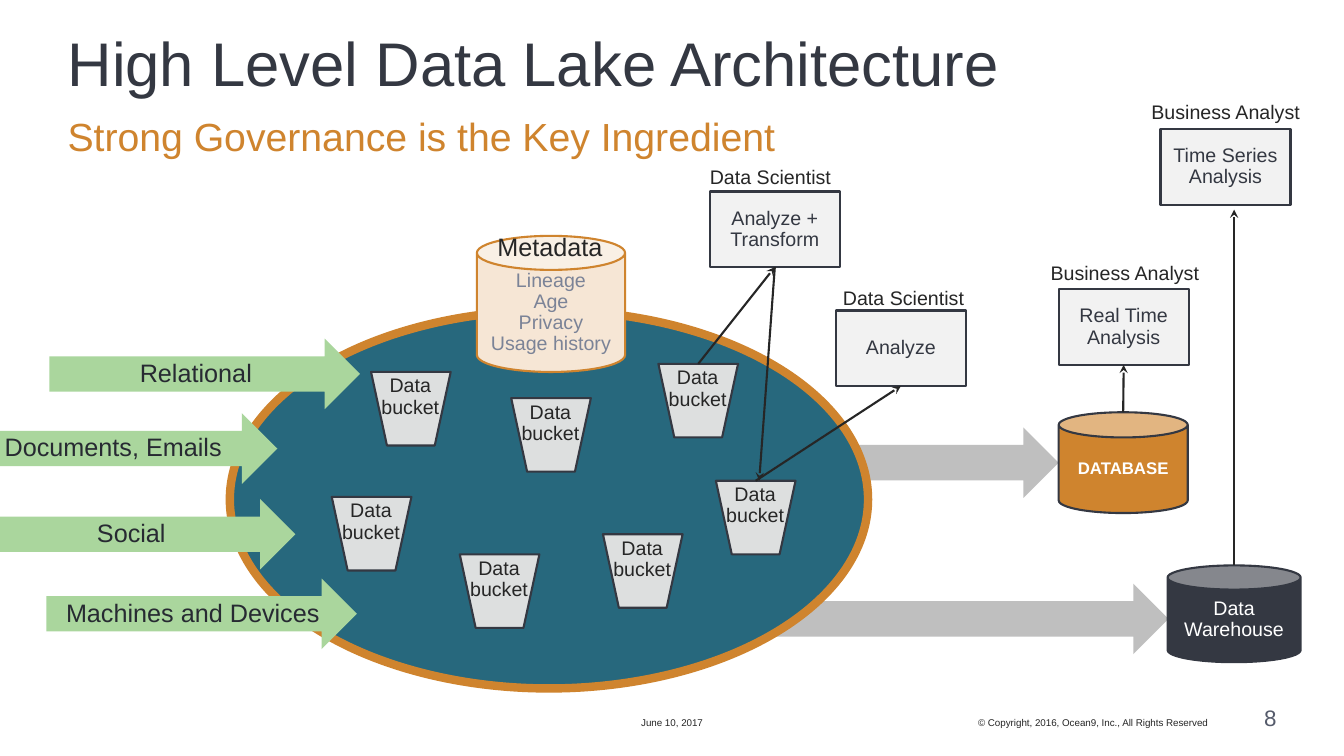
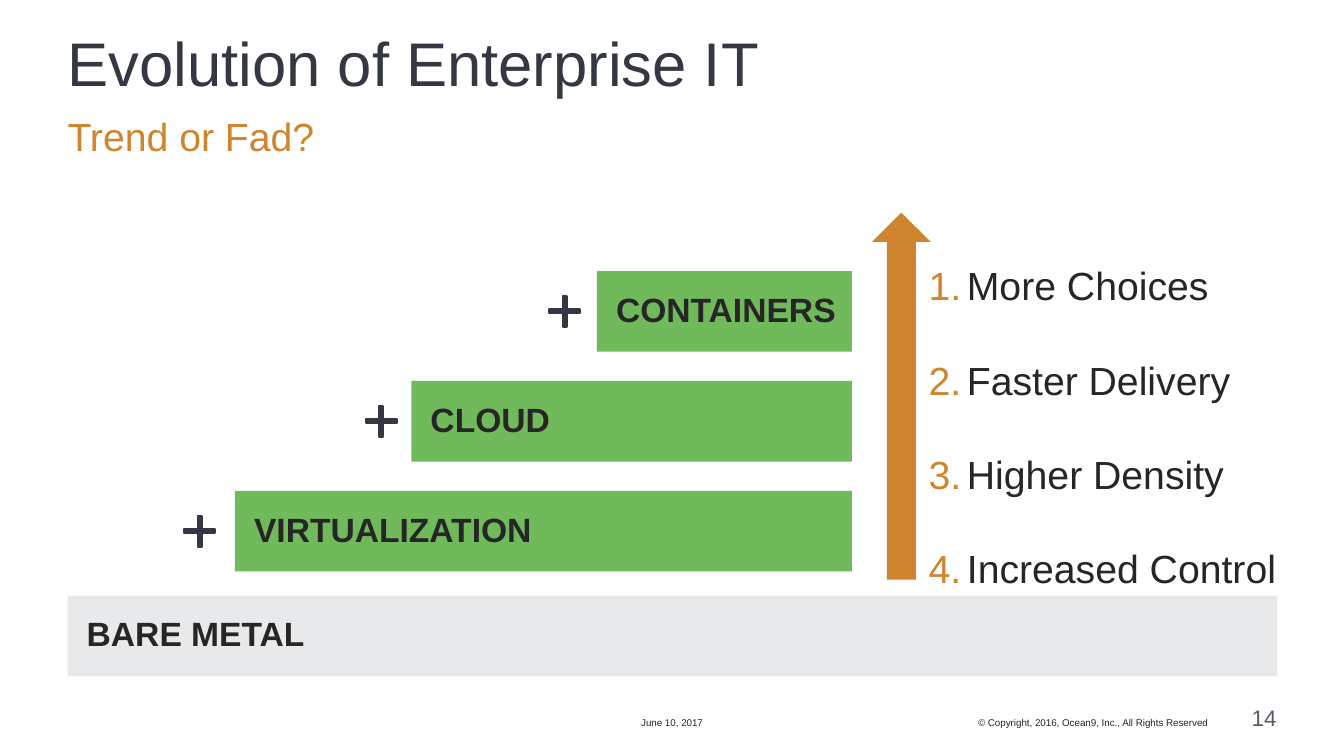
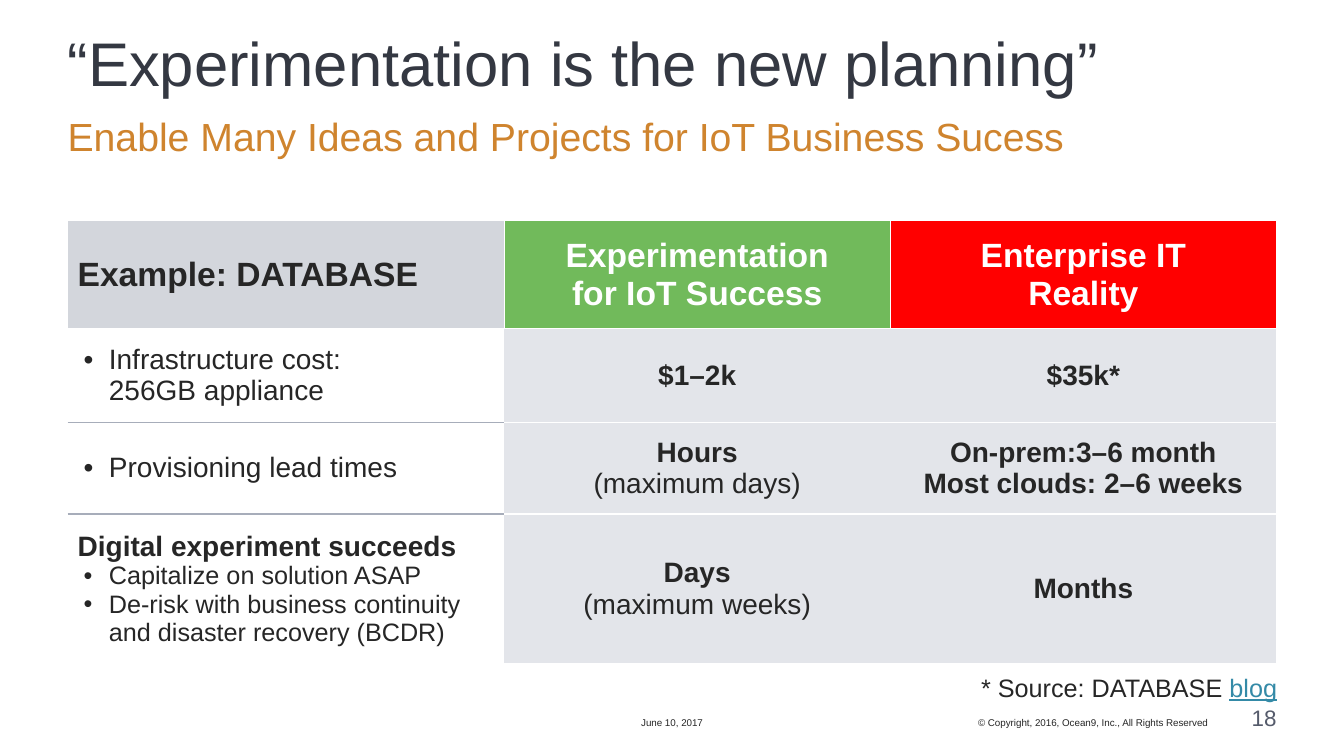
import lxml.etree
import pptx
import pptx.dml.color
import pptx.enum.shapes
import pptx.enum.text
import pptx.oxml
import pptx.oxml.ns
import pptx.util

Inches = pptx.util.Inches
SHAPE = pptx.enum.shapes.MSO_SHAPE
ANCHOR = pptx.enum.text.MSO_ANCHOR
ALIGN = pptx.enum.text.PP_ALIGN
LEFT, CENTER, RIGHT = ALIGN.LEFT, ALIGN.CENTER, ALIGN.RIGHT
qn = pptx.oxml.ns.qn

COLORS = {
    "text": "262626", "navy": "343842", "orange": "CF842E", "white": "FFFFFF",
    "page number": "555B6B", "link": "348AA7", "lake": "27687D", "cream": "F6E6D5",
    "metadata": "7B8397", "feed": "AAD69D", "feed text": "272A32", "gray arrow": "BFBFBF",
    "bucket": "DDDFDF", "box": "F2F2F2", "green": "71BA5B", "bare metal": "E8E9EA",
    "header": "D3D6DC", "red": "FF0000", "cell": "E3E5EA", "rule": "A7ADBA",
}
RGB = {name: pptx.dml.color.RGBColor.from_string(value) for name, value in COLORS.items()}


def write(frame, text, *, size, color="text", bold=False, underline=None, align=LEFT,
          spacing=0.9, bullet=None, bullet_color=None, indent=0, same_paragraph=False):
    """Add text to a frame: \\n starts a paragraph, \\v breaks a line."""
    for line in text.split("\n"):
        paragraph = frame.paragraphs[-1]
        if paragraph.runs and not same_paragraph:
            paragraph = frame.add_paragraph()
        if not same_paragraph:
            properties = paragraph._p.get_or_add_pPr()
            properties.set("marL", str(Inches(indent)))
            properties.set("indent", str(Inches(-0.25 if bullet == "•" else -indent)))
            if bullet_color:
                holder = lxml.etree.SubElement(properties, qn("a:buClr"))
                lxml.etree.SubElement(holder, qn("a:srgbClr"), val=COLORS[bullet_color])
            if bullet == "1.":
                lxml.etree.SubElement(properties, qn("a:buAutoNum"), type="arabicPeriod")
            elif bullet:
                lxml.etree.SubElement(properties, qn("a:buFont"), typeface="Arial")
                lxml.etree.SubElement(properties, qn("a:buChar"), char=bullet)
            else:
                lxml.etree.SubElement(properties, qn("a:buNone"))
            paragraph.alignment = align
            paragraph.line_spacing = spacing
            paragraph.space_before = pptx.util.Pt(0)
        for number, piece in enumerate(line.split("\v")):
            if number:
                paragraph.add_line_break()
            run = paragraph.add_run()
            run.text = piece
            run.font.name = "Arial"
            run.font.size = pptx.util.Pt(size)
            run.font.bold = bold
            run.font.underline = underline
            run.font.color.rgb = RGB[color]


def add_box(slide, kind, left, top, width, height, fill=None, line=None, line_width=1.5):
    """Add a preset shape, or an unpadded text box when kind is None."""
    place = [Inches(length) for length in (left, top, width, height)]
    if kind is None:
        shape = slide.shapes.add_textbox(*place)
        frame = shape.text_frame
        frame.word_wrap = True
        frame.margin_left = frame.margin_right = frame.margin_top = frame.margin_bottom = 0
        return shape
    shape = slide.shapes.add_shape(kind, *place)
    shape.shadow.inherit = False
    shape.fill.solid()
    shape.fill.fore_color.rgb = RGB[fill]
    if line:
        shape.line.color.rgb = RGB[line]
        shape.line.width = pptx.util.Pt(line_width)
    else:
        shape.line.fill.background()
    return shape


presentation = pptx.Presentation()
presentation.slide_width = Inches(13.33)
presentation.slide_height = Inches(7.5)

# Titles, subtitles and footers
TITLE_ONLY, TITLE_CONTENT, TWO_CONTENT = 5, 1, 3
slides = []
for layout, title, subtitle, subtitle_width, page in (
    (TITLE_CONTENT, "High Level Data Lake Architecture",
     "Strong Governance is the Key Ingredient", 9.42, "8"),
    (TWO_CONTENT, "Evolution of Enterprise IT", "Trend or Fad?", 12, "14"),
    (TITLE_CONTENT, "“Experimentation is the new planning”",
     "Enable Many Ideas and Projects for IoT Business Sucess", 12.17, "18"),
):
    slide = presentation.slides.add_slide(presentation.slide_layouts[layout])
    slides.append(slide)
    for placeholder, text, top, width, height, size, color in (
        (slide.shapes.title, title, 0.33, 12.5, 0.75, 44, "navy"),
        (slide.placeholders[1], subtitle, 1.17, subtitle_width, 0.58, 28, "orange"),
    ):
        placeholder.left, placeholder.top = Inches(0.67), Inches(top)
        placeholder.width, placeholder.height = Inches(width), Inches(height)
        frame = placeholder.text_frame
        frame.margin_left = frame.margin_right = frame.margin_top = frame.margin_bottom = 0
        frame.vertical_anchor = ANCHOR.TOP
        frame.auto_size = pptx.enum.text.MSO_AUTO_SIZE.NONE
        write(frame, text, size=size, color=color)
    for text, left, width, height, size, color, align in (
        ("June 10, 2017", 6.12, 1.09, 0.23, 7, "text", CENTER),
        ("© Copyright, 2016, Ocean9, Inc., All Rights Reserved",
         7.58, 4.4, 0.23, 7, "text", RIGHT),
        (page, 12.08, 0.58, 0.25, 16, "page number", RIGHT),
    ):
        footer = add_box(slide, None, left, 7, width, height)
        footer.text_frame.vertical_anchor = ANCHOR.BOTTOM
        write(footer.text_frame, text, size=size, color=color, align=align, spacing=1)

lake_slide, evolution_slide, planning_slide = slides

# Data lake with its feeds and outlets
for left, top, width in ((7.42, 5.79, 4.17), (7.84, 4.24, 2.66)):
    add_box(lake_slide, SHAPE.RIGHT_ARROW, left, top, width, 0.7, "gray arrow")
add_box(lake_slide, SHAPE.OVAL, 2.28, 3.08, 6.33, 3.75, "lake", "orange", 6)

for text, left, top in (
    ("Relational", 0.49, 3.36), ("Documents, Emails", -0.33, 4.1),
    ("Social", -0.15, 4.95), ("Machines and Devices", 0.46, 5.74),
):
    feed = add_box(lake_slide, SHAPE.RIGHT_ARROW, left, top, 3.08, 0.7, "feed")
    write(feed.text_frame, text, size=18, color="feed text", align=CENTER)

buckets = []
for left, top in ((3.68, 3.69), (6.53, 3.61), (7.1, 4.77), (5.98, 5.3),
                  (4.56, 5.5), (3.29, 4.93), (5.07, 3.95)):
    buckets.append(add_box(lake_slide, SHAPE.FLOWCHART_MANUAL_OPERATION,
                           left, top, 0.79, 0.73, "bucket", "navy"))
    label = add_box(lake_slide, None, left - 0.11, top + 0.04, 1, 0.53)
    write(label.text_frame, "Data\nbucket", size=14, align=CENTER)

for text, left, top, width, height, fill, line, size, color, bold in (
    ("Lineage\nAge\nPrivacy\nUsage history", 4.73, 2.34, 1.47, 1.35,
     "cream", "orange", 14, "metadata", False),
    ("Data Warehouse", 11.58, 5.61, 1.32, 0.96, "navy", "navy", 14, "white", False),
    ("DATABASE", 10.5, 4.09, 1.28, 1, "orange", "navy", 12, "white", True),
):
    can = add_box(lake_slide, SHAPE.CAN, left, top, width, height, fill, line)
    write(can.text_frame, text, size=size, color=color, bold=bold, align=CENTER)
metadata_label = add_box(lake_slide, None, 4.83, 2.29, 1.25, 0.3)
write(metadata_label.text_frame, "Metadata", size=18, align=CENTER, spacing=1)

analyses = {}
for text, left, top, role, role_left, role_top in (
    ("Analyze + Transform", 7.04, 1.9, "Data Scientist", 7.04, 1.66),
    ("Analyze", 8.29, 3.08, "Data Scientist", 8.36, 2.86),
    ("Real Time Analysis", 10.5, 2.87, "Business Analyst", 10.42, 2.61),
    ("Time Series Analysis", 11.51, 1.28, "Business Analyst", 11.42, 1.02),
):
    analyses[text] = add_box(lake_slide, SHAPE.RECTANGLE, left, top, 1.29, 0.75, "box", "navy")
    write(analyses[text].text_frame, text, size=14, color="navy", align=CENTER)
    role_label = add_box(lake_slide, None, role_left, role_top, 1.7, 0.35)
    write(role_label.text_frame, role, size=14)

transform = analyses["Analyze + Transform"]
for start, end, start_shape, start_site, end_shape in (
    ((6.93, 3.61), (7.68, 2.65), buckets[1], 0, transform),
    ((7.68, 2.65), (7.53, 4.77), transform, 2, None),
    ((7.49, 4.77), (8.94, 3.83), buckets[2], 0, analyses["Analyze"]),
    ((11.14, 4.09), (11.15, 3.62), None, None, analyses["Real Time Analysis"]),
    ((12.24, 5.61), (12.24, 2.08), None, None, None),
):
    connector = lake_slide.shapes.add_connector(
        pptx.enum.shapes.MSO_CONNECTOR.STRAIGHT,
        *[Inches(length) for length in start + end])
    if start_shape:
        connector.begin_connect(start_shape, start_site)
    if end_shape:
        connector.end_connect(end_shape, 2)
    connector.line.color.rgb = RGB["text"]
    connector.line.width = pptx.util.Pt(1.5)
    lxml.etree.SubElement(connector.line._get_or_add_ln(), qn("a:tailEnd"), type="stealth")
    lxml.etree.SubElement(connector._element.spPr, qn("a:effectLst"))

# Layers of enterprise IT
BAR_RIGHT = 8.45
bars = [("BARE METAL", 0.67, 5.91, 12, "bare metal")]
for level, (text, left, plus_left) in enumerate((
    ("CONTAINERS", 5.92, 5.39), ("CLOUD", 4.08, 3.57), ("VIRTUALIZATION", 2.33, 1.77),
)):
    top = 2.69 + 1.09 * level
    bars.append((text, left, top, BAR_RIGHT - left, "green"))
    plus = add_box(evolution_slide, SHAPE.MATH_PLUS, plus_left, top + 0.19, 0.42, 0.42,
                   "navy", "navy")
    plus.adjustments[0] = 0.09
for text, left, top, width, fill in bars:
    bar = add_box(evolution_slide, SHAPE.RECTANGLE, left, top, width, 0.8, fill)
    bar.text_frame.margin_left = Inches(0.19)
    write(bar.text_frame, text, size=24, bold=True)

add_box(evolution_slide, SHAPE.UP_ARROW, 8.65, 2.11, 0.58, 3.64, "orange")
benefits = evolution_slide.placeholders[2]
benefits.left, benefits.top = Inches(9.21), Inches(2.13)
benefits.width, benefits.height = Inches(3.62), Inches(3.79)
frame = benefits.text_frame
frame.margin_left = frame.margin_right = frame.margin_top = frame.margin_bottom = 0
frame.auto_size = pptx.enum.text.MSO_AUTO_SIZE.NONE
write(frame, "More Choices\nFaster Delivery\nHigher Density\nIncreased Control", size=28,
      spacing=2, bullet="1.", bullet_color="orange", indent=0.38)

# Comparison table: each cell lists its pieces of text with their format
bullet = {"bullet": "•", "indent": 0.31}
bold = {"bold": True}
more = {"same_paragraph": True}
rows = (
    (1.07, [("Example: DATABASE", bold)],
     [("Experimentation\vfor IoT Success", {"bold": True, "color": "white"})],
     [("Enterprise IT\vReality", {"bold": True, "color": "white"})]),
    (0.93, [("Infrastructure cost:\v256GB appliance", bullet)],
     [("$1–2k", bold)], [("$35k*", bold)]),
    (0.91, [("Provisioning lead times", bullet)],
     [("Hours\v", bold), ("(maximum days)", more)],
     [("On-prem:3–6 month\vMost clouds: 2–6 weeks", bold)]),
    (1.48, [("Digital experiment succeeds", bold),
            ("Capitalize on solution ASAP\n"
             "De-risk with business continuity and disaster recovery (BCDR)",
             {"size": 18, **bullet})],
     [("Days\v", bold), ("(maximum weeks)", more)], [("Months", bold)]),
)
table = planning_slide.shapes.add_table(
    len(rows), 3, Inches(0.67), Inches(2.19), Inches(12), Inches(4.39)).table
table.first_row = table.horz_banding = False
for column, width in zip(table.columns, (4.33, 3.83, 3.83)):
    column.width = Inches(width)
for row_number, (height, *contents) in enumerate(rows):
    table.rows[row_number].height = Inches(height)
    for column_number, pieces in enumerate(contents):
        cell = table.cell(row_number, column_number)
        cell.vertical_anchor = ANCHOR.MIDDLE
        is_header, is_label = row_number == 0, column_number == 0
        side = "white" if is_header else None
        top = "rule" if is_label and row_number > 1 else "white"
        bottom = "rule" if is_label and 0 < row_number < len(rows) - 1 else "white"
        for edge, color in (("L", side), ("R", side), ("T", top), ("B", bottom)):
            border = lxml.etree.SubElement(cell._tc.get_or_add_tcPr(), qn("a:ln" + edge),
                                           w=str(pptx.util.Pt(1)))
            if color:
                holder = lxml.etree.SubElement(border, qn("a:solidFill"))
                lxml.etree.SubElement(holder, qn("a:srgbClr"), val=COLORS[color])
            else:
                lxml.etree.SubElement(border, qn("a:noFill"))
        if is_label and not is_header:
            cell.fill.background()
        else:
            cell.fill.solid()
            fill = ("header", "green", "red")[column_number] if is_header else "cell"
            cell.fill.fore_color.rgb = RGB[fill]
        for text, text_format in pieces:
            write(cell.text_frame, text, **{
                "size": 24 if is_header else 20, "spacing": 1,
                "align": LEFT if is_label else CENTER, **text_format})

source_note = add_box(planning_slide, None, 9.73, 6.7, 3.08, 0.42)
write(source_note.text_frame, "* Source: DATABASE ", size=18)
write(source_note.text_frame, "blog", size=18, color="link", underline=True,
      same_paragraph=True)

presentation.save("out.pptx")
